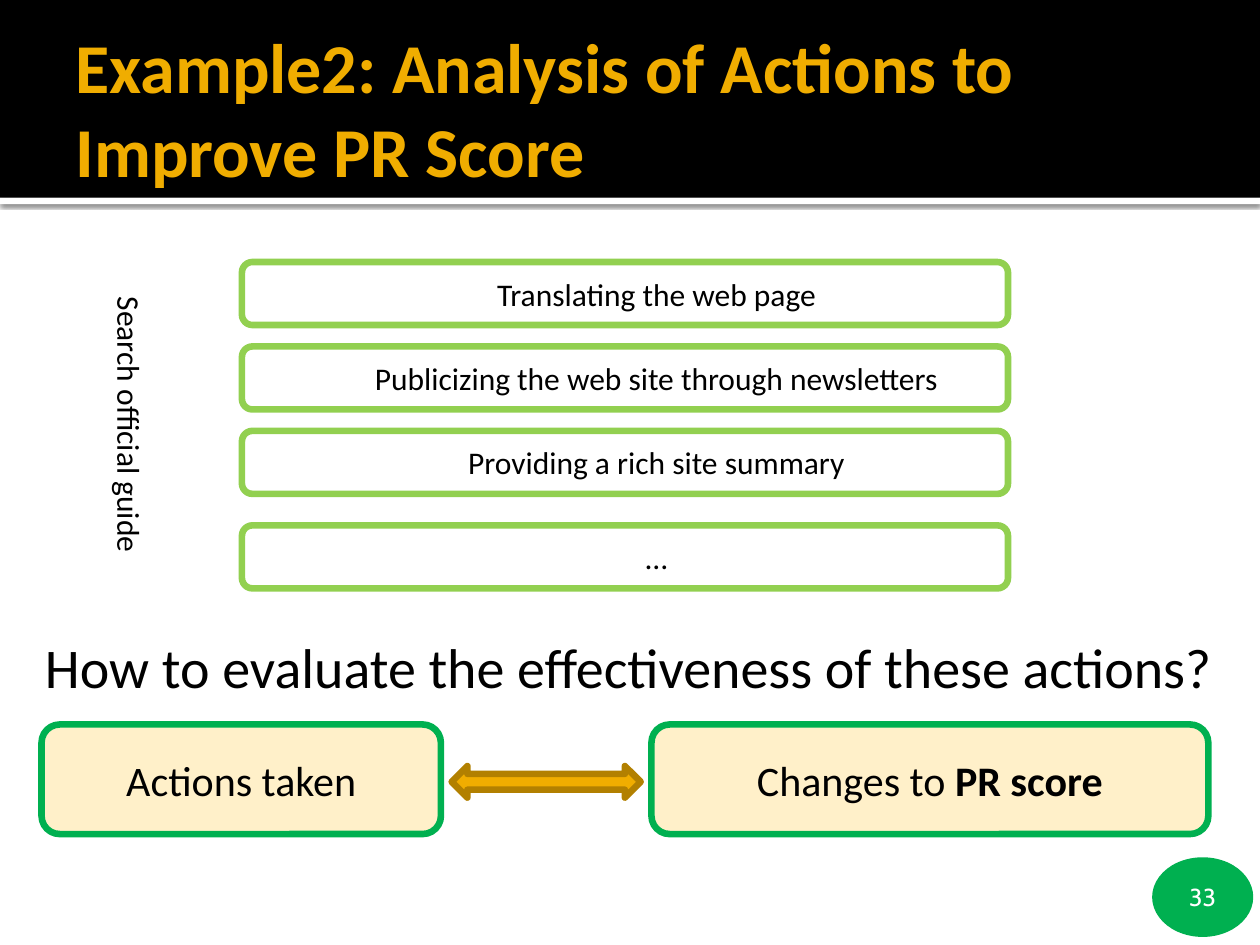
import pptx
import pptx.dml.color
import pptx.enum.shapes
import pptx.enum.text
import pptx.oxml
import pptx.oxml.ns
import pptx.util

SHAPE = pptx.enum.shapes.MSO_SHAPE
ANCHOR = pptx.enum.text.MSO_ANCHOR
ALIGN = pptx.enum.text.PP_ALIGN
In = pptx.util.Inches

W, H = 10, 7.5
BLACK, WHITE, GOLD, GREEN, LIME = "000000", "FFFFFF", "F0AD00", "00B050", "92D050"
CREAM, BRONZE = "FFF0C9", "B28000"
LINE = 3.78

TITLE = "Example2: Analysis of Actions to Improve PR Score"
SIDE_LABEL = "Search official guide"
QUESTION = "How to evaluate the effectiveness of these actions?"
PAGE = "33"
ACTIONS = [  # text, top
    ("Translating the web page", 2.08),
    ("Publicizing the web site through newsletters", 2.75),
    ("Providing a rich site summary", 3.42),
    ("…", 4.17),
]
COMPARED = [  # left, width, (text, bold) runs
    (0.33, 3.17, [("Actions taken", False)]),
    (5.17, 4.42, [("Changes to ", False), ("PR score", True)]),
]
BAND_H = 1.57
ACTION_LEFT, ACTION_W, ACTION_H, ACTION_INDENT = 1.92, 6.08, 0.5, 0.5
COMPARED_TOP, COMPARED_H = 5.75, 0.87
ARROW_W, ARROW_H = 1.5, 0.25


def rgb(color):
    return pptx.dml.color.RGBColor.from_string(color)


def write(sp, runs, size, color=BLACK, font="Calibri", bold=None,
          align=ALIGN.CENTER, anchor=ANCHOR.MIDDLE):
    """Fill the shape with one paragraph of (text, bold) runs."""
    tf = sp.text_frame
    tf.word_wrap = True
    tf.vertical_anchor = anchor
    p = tf.paragraphs[0]
    p.alignment = align
    p.font.name, p.font.size, p.font.bold = font, pptx.util.Pt(size), bold
    p.font.color.rgb = rgb(color)
    for text, strong in runs:
        r = p.add_run()
        r.text = text
        if strong:
            r.font.bold = True
    return tf


def set_margins(tf, left, top, right, bottom):
    tf.margin_left, tf.margin_top = In(left), In(top)
    tf.margin_right, tf.margin_bottom = In(right), In(bottom)


def add_shape(shapes, kind, box, fill, line=None):
    sp = shapes.add_shape(kind, *map(In, box))
    sp.shadow.inherit = False
    sp.fill.solid()
    sp.fill.fore_color.rgb = rgb(fill)
    if line:
        sp.line.color.rgb = rgb(line)
        sp.line.width = pptx.util.Pt(LINE)
    else:
        sp.line.fill.background()
    return sp


def add_text(shapes, box, text, size, **style):
    sp = shapes.add_textbox(*map(In, box))
    write(sp, [(text, False)], size, **style)
    return sp


def cast_shadow(sp):
    """Put a soft downward shadow in the shape's empty effect list."""
    effects = sp.element.spPr.find(pptx.oxml.ns.qn("a:effectLst"))
    effects.append(pptx.oxml.parse_xml(
        f'<a:outerShdw {pptx.oxml.ns.nsdecls("a")} blurRad="31750" dist="10160" '
        'dir="5400000" algn="tl" rotWithShape="0"><a:srgbClr val="000000">'
        '<a:alpha val="60000"/></a:srgbClr></a:outerShdw>'))


def main():
    prs = pptx.Presentation()
    prs.slide_width, prs.slide_height = In(W), In(H)
    s = prs.slides.add_slide(prs.slide_layouts[5])
    shapes = s.shapes

    title = shapes.title
    title.left, title.top, title.width, title.height = map(In, (0.5, 0.17, 9, 1.37))
    tf = write(title, [(TITLE, False)], 40, GOLD, bold=True, align=ALIGN.LEFT)
    tf.auto_size = pptx.enum.text.MSO_AUTO_SIZE.NONE
    set_margins(tf, 0.1, 0.05, 0.05, 0.05)

    rule = add_shape(shapes, SHAPE.RECTANGLE, (0, BAND_H, W, 0.05), WHITE)
    cast_shadow(rule)
    band = add_shape(shapes, SHAPE.RECTANGLE, (0, 0, W, BAND_H), BLACK)
    for backdrop in (rule, band):
        title.element.addprevious(backdrop.element)

    badge = add_shape(shapes, SHAPE.OVAL, (9.17, 6.83, 0.75, 0.58), GREEN, GREEN)
    write(badge, [(PAGE, False)], 14, WHITE, font="Cabin")

    for text, top in ACTIONS:
        sp = add_shape(shapes, SHAPE.ROUNDED_RECTANGLE,
                       (ACTION_LEFT, top, ACTION_W, ACTION_H), WHITE, LIME)
        tf = write(sp, [(text, False)], 18)
        tf.margin_left = In(0.1 + ACTION_INDENT)

    question = add_text(shapes, (0, 4.92, W, 0.75), QUESTION, 32, anchor=ANCHOR.TOP)
    set_margins(question.text_frame, 0.08, 0.1, 0.1, 0.05)

    for left, width, runs in COMPARED:
        sp = add_shape(shapes, SHAPE.ROUNDED_RECTANGLE,
                       (left, COMPARED_TOP, width, COMPARED_H), CREAM, GREEN)
        write(sp, runs, 24)

    gap_left = COMPARED[0][0] + COMPARED[0][1]
    gap_middle = (gap_left + COMPARED[1][0]) / 2
    add_shape(shapes, SHAPE.LEFT_RIGHT_ARROW,
              (gap_middle - ARROW_W / 2, COMPARED_TOP + (COMPARED_H - ARROW_H) / 2 + 0.02,
               ARROW_W, ARROW_H), GOLD, BRONZE)

    label = add_text(shapes, (-0.26, 3.17, 2.58, 0.4), SIDE_LABEL, 18, anchor=ANCHOR.TOP)
    label.rotation = 90

    prs.save("out.pptx")


if __name__ == "__main__":
    main()
